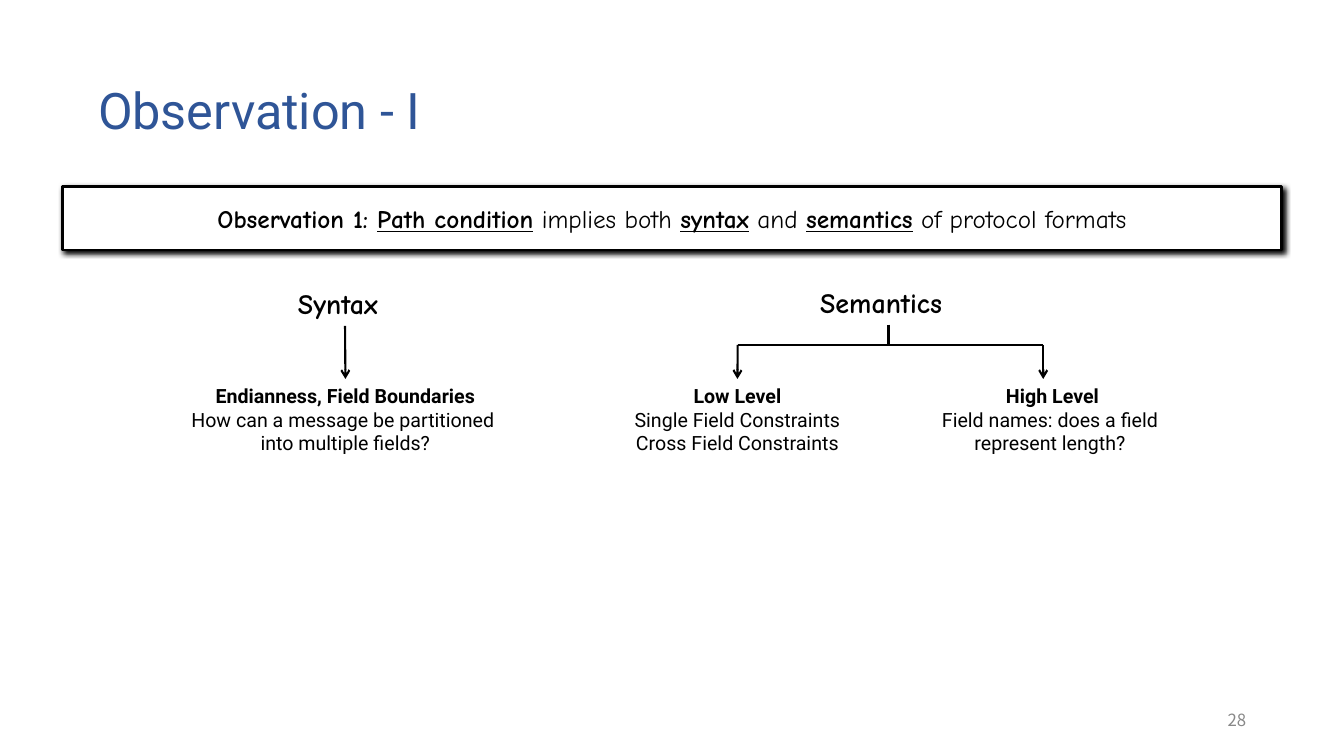
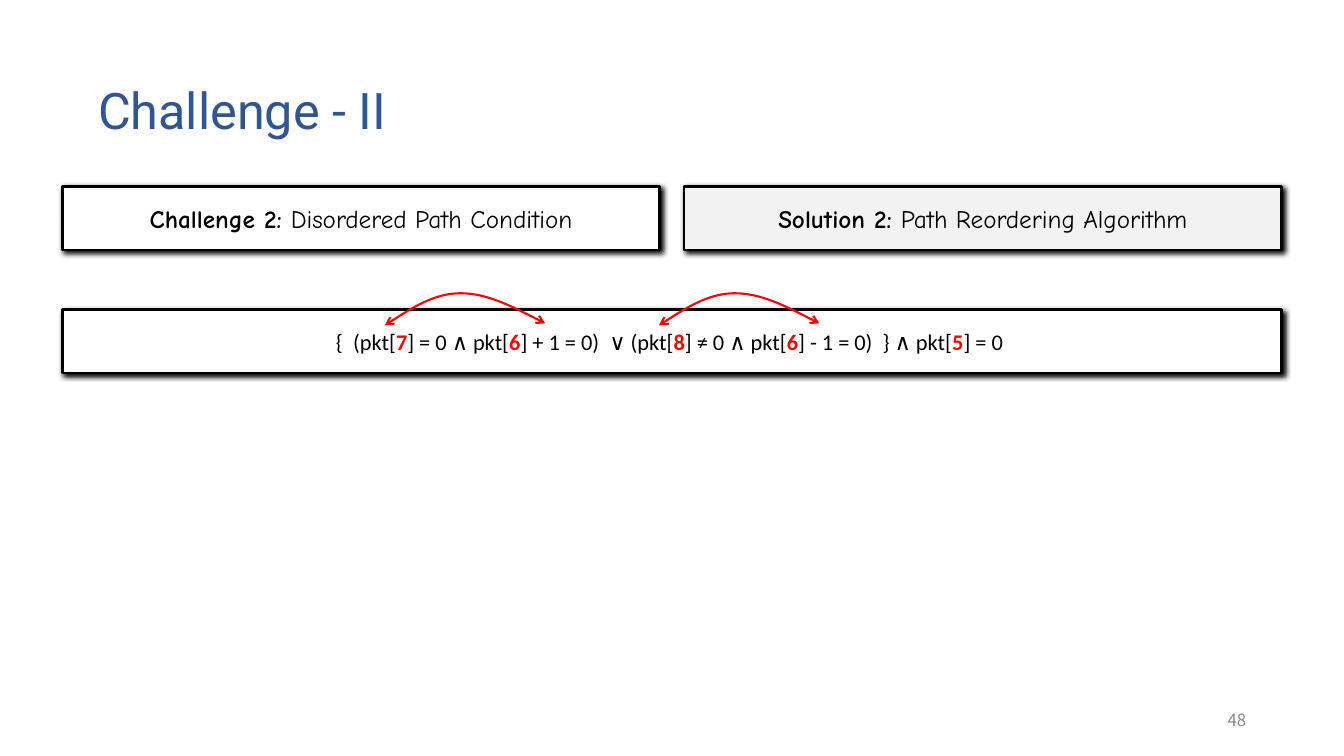
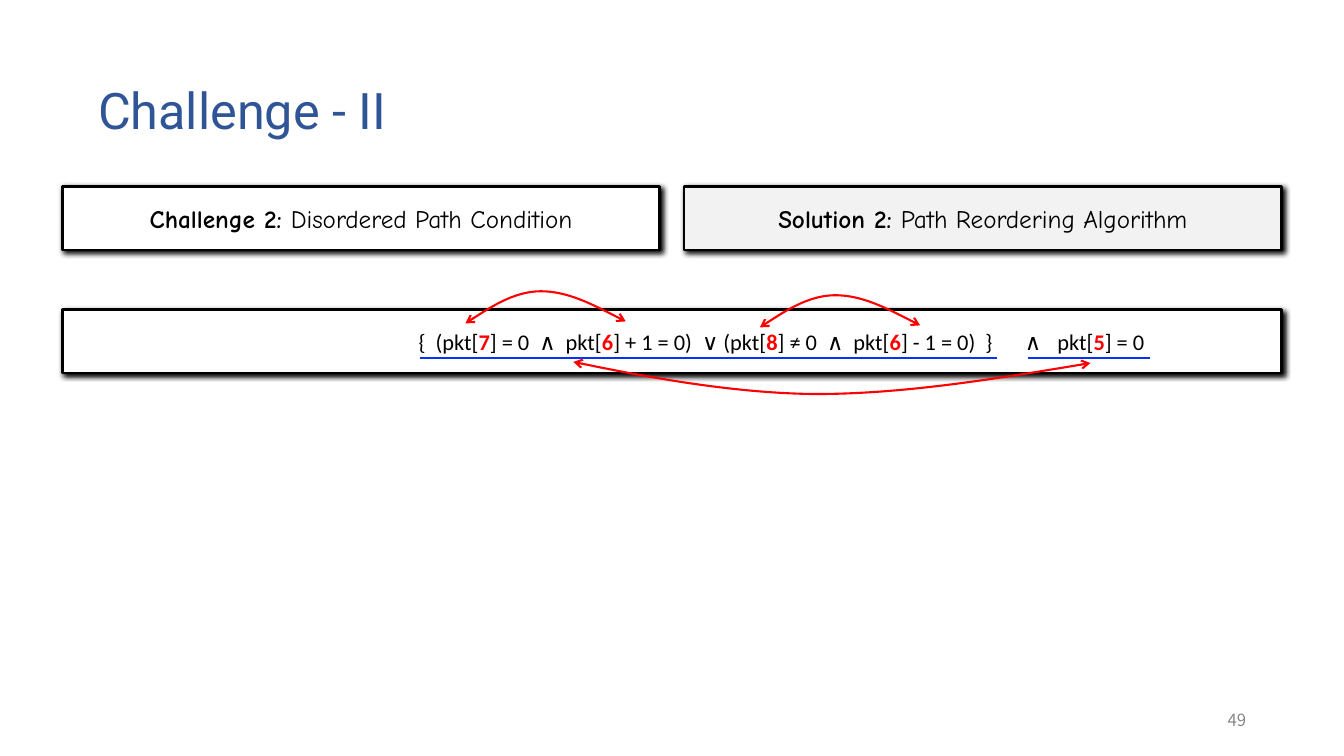
from lxml import etree
from pptx import Presentation
from pptx.dml.color import RGBColor
from pptx.enum.shapes import MSO_CONNECTOR, MSO_SHAPE
from pptx.enum.text import MSO_ANCHOR, MSO_AUTO_SIZE, PP_ALIGN
from pptx.oxml.ns import qn
from pptx.util import Cm, Pt

LEFT, MID, RIGHT = PP_ALIGN.LEFT, PP_ALIGN.CENTER, PP_ALIGN.RIGHT
MIDDLE, FIXED = MSO_ANCHOR.MIDDLE, MSO_AUTO_SIZE.NONE
RECT, LINE = MSO_SHAPE.RECTANGLE, MSO_CONNECTOR.STRAIGHT
BLACK, WHITE, PALE, GRAY = "000000", "FFFFFF", "F2F2F2", "888888"
NAVY, RED, BLUE = "2F5597", "FF0000", "0432FF"
HAND, SANS, MATH, NUM = "Comic Neue", "Roboto", "Calibri", "Noto Sans CJK SC"
hue = RGBColor.from_string

# Banner grid in cm
EDGE, FULL, GAP, HIGH = 1.57, 30.73, 0.61, 1.6
HALF = (FULL - GAP) / 2
TOP, ROW = 4.7, 7.8


def write(frame, lines, face, size, align, color=BLACK):
    """Each line is a list of (text, marks): b bold, u underlined, r red."""
    for i, line in enumerate(lines):
        para = frame.add_paragraph() if i else frame.paragraphs[0]
        para.alignment = align
        for text, marks in line:
            run = para.add_run()
            run.text = text
            font = run.font
            font.name, font.size = face, Pt(size)
            font.bold, font.underline = "b" in marks, "u" in marks
            font.color.rgb = hue(RED if "r" in marks else color)


def stroke(shape, color, width, ends=()):
    """Set the outline and its arrowheads; return the empty effect list."""
    shape.line.color.rgb = hue(color)
    shape.line.width = Pt(width)
    props = shape.element.spPr
    for end in ends:
        etree.SubElement(props.find(qn("a:ln")), qn(end), type="arrow")
    return etree.SubElement(props, qn("a:effectLst"))


prs = Presentation()
prs.slide_width, prs.slide_height = Cm(33.87), Cm(19.05)

# Banner text
claim = [("Observation 1: ", "b"), ("Path condition", "bu"), (" implies both ", ""),
         ("syntax", "bu"), (" and ", ""), ("semantics", "bu"),
         (" of protocol formats", "")]
pair = [(EDGE, TOP, HALF, WHITE, HAND, 18,
         [("Challenge 2: ", "b"), ("Disordered Path Condition", "")]),
        (EDGE + HALF + GAP, TOP, HALF, PALE, HAND, 18,
         [("Solution 2: ", "b"), ("Path Reordering Algorithm", "")])]
tight = [("{  (pkt[", ""), ("7", "br"), ("] = 0 ∧ pkt[", ""), ("6", "br"),
         ("] + 1 = 0)  ∨ (pkt[", ""), ("8", "br"), ("] ≠ 0 ∧ pkt[", ""), ("6", "br"),
         ("] - 1 = 0)  } ∧ pkt[", ""), ("5", "br"), ("] = 0 ", "")]
loose = [(text.replace("} ∧ ", "}\t∧\t").replace("0 ∧ ", "0  ∧  "), marks)
         for text, marks in tight]

decks = [
    ("Observation - I", "28", [(EDGE, TOP, FULL, WHITE, HAND, 18, claim)]),
    ("Challenge - II", "48", pair + [(EDGE, ROW, FULL, WHITE, MATH, 16, tight)]),
    ("Challenge - II", "49", pair + [(EDGE, ROW, FULL, WHITE, MATH, 16, loose)]),
]

# Shared parts: title, page number, banners
slides = []
for name, page, boxes in decks:
    slide = prs.slides.add_slide(prs.slide_layouts[5])
    slides.append(slide)
    title = slide.shapes.title
    title.left, title.top, title.width, title.height = Cm(2.34), Cm(1.02), Cm(29.21), Cm(3.68)
    foot = slide.shapes.add_textbox(Cm(30.78), Cm(17.78), Cm(0.76), Cm(0.74))
    for shape in (title, foot):
        frame = shape.text_frame
        frame.auto_size, frame.vertical_anchor = FIXED, MIDDLE
        frame.margin_left = frame.margin_right = Cm(0.13)
        frame.margin_top = frame.margin_bottom = Cm(0.13)
    write(title.text_frame, [[(name, "")]], SANS, 36, LEFT, NAVY)
    title.text_frame.paragraphs[0].line_spacing = 0.9
    foot.text_frame.word_wrap = False
    write(foot.text_frame, [[(page, "")]], NUM, 12, RIGHT, GRAY)

    for x, y, wide, fill, face, size, runs in boxes:
        box = slide.shapes.add_shape(RECT, Cm(x), Cm(y), Cm(wide), Cm(HIGH))
        box.fill.solid()
        box.fill.fore_color.rgb = hue(fill)
        shade = etree.SubElement(stroke(box, BLACK, 2), qn("a:outerShdw"),
                                 blurRad=str(Pt(4)), dist=str(Pt(2)), dir="2700000",
                                 algn="tl", rotWithShape="0")
        etree.SubElement(shade, qn("a:srgbClr"), val=BLACK)
        box.text_frame.vertical_anchor = MIDDLE
        write(box.text_frame, [runs], face, size, MID)

# The last formula starts at an inset and is spread by tab stops
frame = box.text_frame
frame.margin_left = Cm(8.98)
para = frame.paragraphs[0]
para.alignment = LEFT
tabs = etree.SubElement(para._p.get_or_add_pPr(), qn("a:tabLst"))
for stop in (15.28, 16.1):
    etree.SubElement(tabs, qn("a:tab"), pos=str(Cm(stop)), algn="l")

# Slide 1: tree of syntax and semantics
first = slides[0].shapes
nodes = []
for x, y, wide, high, face, size, align, lines in [
    (7.26, 7.09, 2.87, 1.12, HAND, 20, LEFT, ["Syntax"]),
    (20.42, 7.06, 3.94, 1.12, HAND, 20, LEFT, ["Semantics"]),
    (4.55, 9.55, 8.31, 2.06, SANS, 14, MID,
     ["Endianness, Field Boundaries", "How can a message be partitioned ",
      "into multiple fields?"]),
    (15.7, 9.55, 5.77, 2.06, SANS, 14, MID,
     ["Low Level", "Single Field Constraints", "Cross Field Constraints"]),
    (23.44, 9.55, 6.17, 2.06, SANS, 14, MID,
     ["High Level", "Field names: does a field ", "represent length? "]),
]:
    node = first.add_textbox(Cm(x), Cm(y), Cm(wide), Cm(high))
    node.text_frame.word_wrap = True
    rows = [[(text, "" if i else "b")] for i, text in enumerate(lines)]
    write(node.text_frame, rows, face, size, align)
    nodes.append(node)
syntax, sense, bounds, low, top = nodes

TIP = ["a:tailEnd"]
for x1, y1, x2, y2, start, stop, ends in [
    (8.7, 8.21, 8.7, 9.55, syntax, bounds, TIP),
    (22.39, 8.18, 22.39, 8.69, sense, None, ()),
    (18.59, 8.69, 26.29, 8.69, None, None, ()),
    (18.59, 8.69, 18.59, 9.55, None, low, TIP),
    (26.29, 8.69, 26.29, 9.55, None, None, TIP),
]:
    link = first.add_connector(LINE, Cm(x1), Cm(y1), Cm(x2), Cm(y2))
    if start:
        link.begin_connect(start, 2)
    if stop:
        link.end_connect(stop, 0)
    stroke(link, BLACK, 1.5, ends)

# Slides 2 and 3: curved swap arrows, two Bezier pieces each
ARC = [(4.04, 0.76), (3.3, 0.38), (2.57, 0), (1.9, 0), (1.23, 0), (0.43, 0.53), (0, 0.81)]
BOW = [(13.03, 0.03), (10.64, 0.43), (8.26, 0.81), (6.1, 0.81), (3.91, 0.79),
       (1.35, 0.28), (0, 0)]
for slide, x, y, curve in [
    (slides[1], 9.7, 7.39, ARC), (slides[1], 16.61, 7.39, ARC),
    (slides[2], 11.73, 7.34, ARC), (slides[2], 19.15, 7.44, ARC),
    (slides[2], 14.45, 9.12, BOW),
]:
    spots = [(Cm(x + dx), Cm(y + dy)) for dx, dy in curve]
    pen = slide.shapes.build_freeform(*spots[0])
    pen.add_line_segments(spots[1:], close=False)
    swap = pen.convert_to_shape()
    swap.fill.background()
    stroke(swap, RED, 1.5, ["a:headEnd", "a:tailEnd"])
    steps = list(swap.element.iter(qn("a:lnTo")))
    for i in range(0, len(steps), 3):
        outline = steps[i].getparent()
        bend = etree.SubElement(outline, qn("a:cubicBezTo"))
        for step in steps[i:i + 3]:
            bend.append(step[0])
            outline.remove(step)

# Slide 3: underlines of the swapped parts
for x1, x2 in [(10.59, 25.12), (25.91, 28.98)]:
    rule = slides[2].shapes.add_connector(LINE, Cm(x1), Cm(9.02), Cm(x2), Cm(9.02))
    stroke(rule, BLUE, 1.75)

prs.save("out.pptx")
